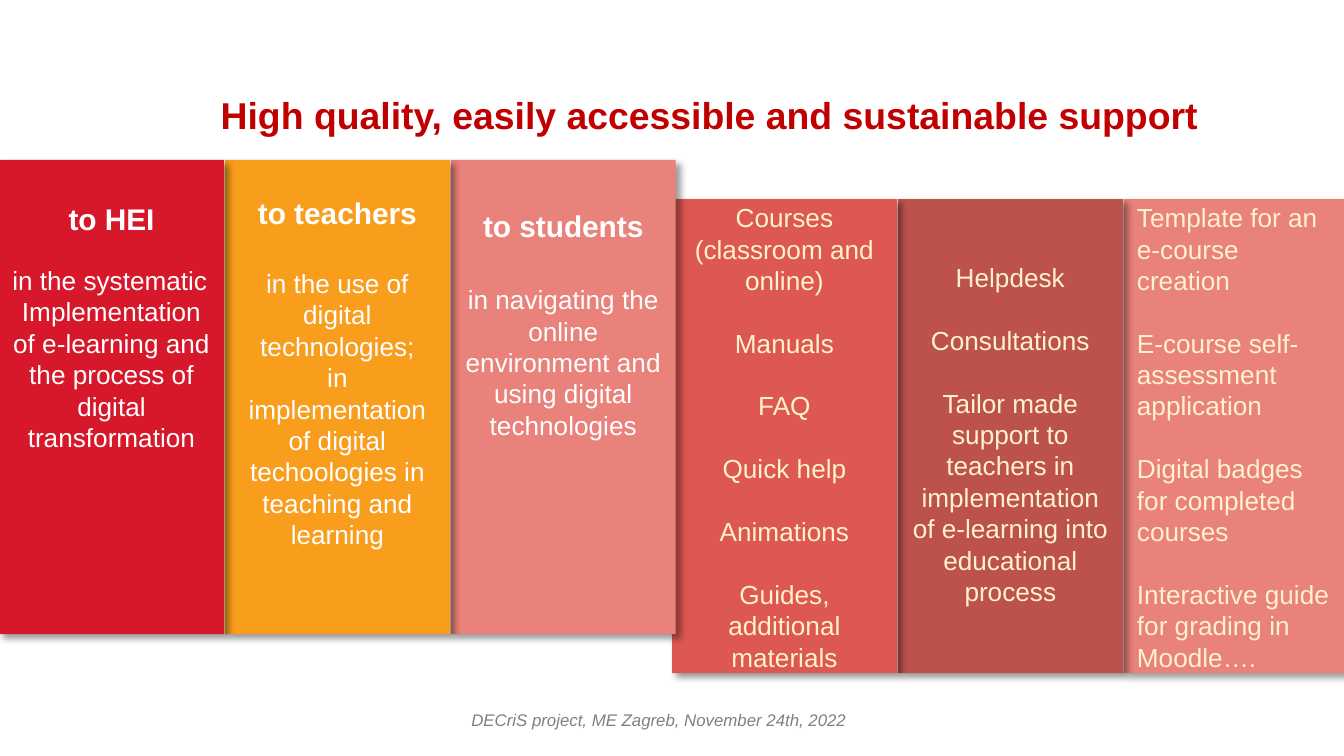
from lxml import etree
from pptx import Presentation
from pptx.dml.color import RGBColor
from pptx.enum.shapes import MSO_SHAPE
from pptx.enum.text import MSO_ANCHOR, MSO_AUTO_SIZE, PP_ALIGN
from pptx.oxml.ns import qn
from pptx.util import Pt

LEFT, CENTER = PP_ALIGN.LEFT, PP_ALIGN.CENTER
TOP, MIDDLE = MSO_ANCHOR.TOP, MSO_ANCHOR.MIDDLE
NO_AUTOFIT = MSO_AUTO_SIZE.NONE
RECT = MSO_SHAPE.RECTANGLE

WHITE, CREAM, CORAL = "FFFFFF", "FFF2CC", "E9827A"
COLUMN_WIDTH, COLUMN_HEIGHT, PITCH = 120.5, 254, 121
LINE = 1.2


def write(p, text, size=14, color=WHITE, bold=False, italic=False,
          align=CENTER, before=0, line=None):
    p.alignment = align
    p.space_before = Pt(before)
    if line:
        p.line_spacing = Pt(line)
    r = p.add_run()
    r.text = text
    r.font.name, r.font.size = "Arial", Pt(size)
    r.font.bold, r.font.italic = bold, italic
    r.font.color.rgb = RGBColor.from_string(color)


def add_column(left, top, fill, inset):
    """Add a shadowed panel and return its text frame."""
    sp = s.shapes.add_shape(RECT, Pt(left), Pt(top), Pt(COLUMN_WIDTH), Pt(COLUMN_HEIGHT))
    sp.fill.solid()
    sp.fill.fore_color.rgb = RGBColor.from_string(fill)
    sp.line.fill.background()
    sp.shadow.inherit = False
    effects = sp.element.spPr.find(qn("a:effectLst"))
    shadow = etree.SubElement(effects, qn("a:outerShdw"), blurRad=str(Pt(4)),
                              dist=str(Pt(3)), dir="2700000", algn="tl", rotWithShape="0")
    black = etree.SubElement(shadow, qn("a:srgbClr"), val="000000")
    etree.SubElement(black, qn("a:alpha"), val="40000")
    tf = sp.text_frame
    tf.word_wrap = True
    tf.vertical_anchor = TOP
    tf.margin_top, tf.margin_bottom = Pt(inset), 0
    return tf


prs = Presentation()
prs.slide_width, prs.slide_height = Pt(720), Pt(405)
s = prs.slides.add_slide(prs.slide_layouts[5])

# Title
title = s.shapes.title
title.left, title.top, title.width, title.height = Pt(57.6), Pt(22.3), Pt(653.8), Pt(78.5)
tf = title.text_frame
tf.word_wrap = True
tf.auto_size = NO_AUTOFIT
tf.vertical_anchor = MIDDLE
tf.margin_left = Pt(60.6)
write(tf.paragraphs[0], "High quality, easily accessible and sustainable support",
      size=20, color="C00000", bold=True, align=LEFT)

# Footer
tf = s.shapes.add_textbox(Pt(125.3), Pt(375), Pt(455), Pt(21.6)).text_frame
tf.word_wrap = True
tf.vertical_anchor = MIDDLE
write(tf.paragraphs[0], "DECriS project, ME Zagreb, November 24th, 2022",
      size=9, color="808080", italic=True)

# Support offered: lower columns, added right to left so each overlaps the next
offers = [
    ("DD5850", 1.4, CENTER, ["Courses (classroom and online)", "Manuals", "FAQ",
                             "Quick help", "Animations", "Guides, additional materials"]),
    ("BD524C", 33.5, CENTER, ["Helpdesk", "Consultations",
                              "Tailor made support to teachers in implementation "
                              "of e-learning into educational process"]),
    (CORAL, 1.4, LEFT, ["Template for an e-course creation",
                        "E-course self-assessment application",
                        "Digital badges for completed courses",
                        "Interactive guide for grading in Moodle…."]),
]
for i, (fill, inset, align, items) in reversed(list(enumerate(offers))):
    tf = add_column(360 + i * PITCH, 106.6, fill, inset)
    for n, item in enumerate(items):
        p = tf.add_paragraph() if n else tf.paragraphs[0]
        write(p, item, color=CREAM, align=align, line=14 * LINE,
              before=14 * LINE if n else 0)

# Audiences: upper columns with a bold heading
audiences = [
    ("D7182A", 22, "to HEI", 14.8, [
        ("in the systematic", LEFT),
        ("Implementation of e-learning and the process of digital transformation", CENTER)]),
    ("F99D1C", 18.8, "to teachers", 19.6, [
        ("in the use of digital technologies;", CENTER),
        ("in implementation of digital techoologies in teaching and learning", CENTER)]),
    (CORAL, 25.3, "to students", 21.7, [
        ("in navigating the online environment and using digital technologies", CENTER)]),
]
for i, (fill, inset, heading, gap, texts) in reversed(list(enumerate(audiences))):
    tf = add_column(-0.5 + i * PITCH, 85.7, fill, inset)
    write(tf.paragraphs[0], heading, size=16, bold=True, line=16 * LINE)
    for n, (text, align) in enumerate(texts):
        write(tf.add_paragraph(), text, align=align, line=14 * LINE,
              before=0 if n else gap)

prs.save("out.pptx")
